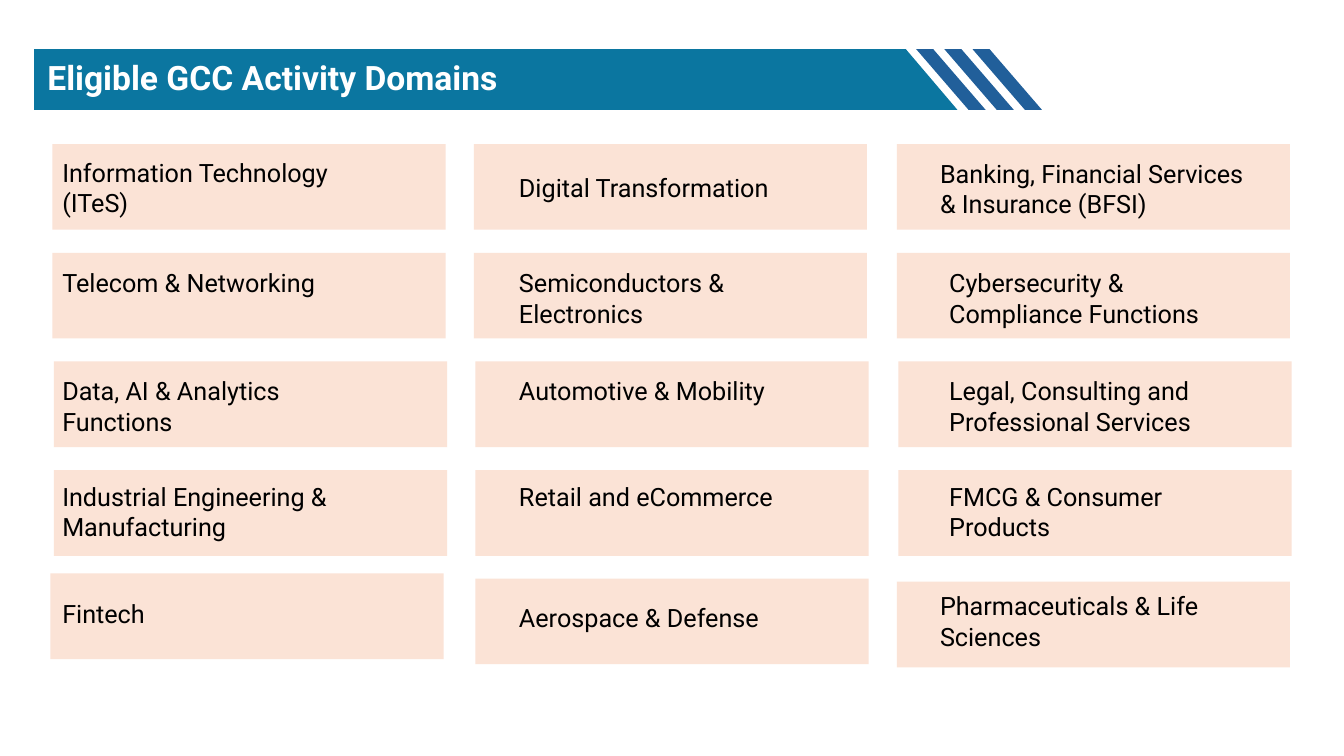
from dataclasses import dataclass

from pptx import Presentation
from pptx.dml.color import RGBColor
from pptx.enum.shapes import MSO_SHAPE
from pptx.enum.text import MSO_ANCHOR, MSO_AUTO_SIZE, PP_ALIGN
from pptx.util import Cm, Pt

TITLE = "Eligible GCC Activity Domains"
DOMAINS = [
    ("Information Technology (ITeS)\t", "Digital Transformation",
     "Banking, Financial Services & Insurance (BFSI)"),
    ("Telecom & Networking", "Semiconductors & Electronics",
     "Cybersecurity & Compliance Functions"),
    ("Data, AI & Analytics Functions", "Automotive & Mobility",
     "Legal, Consulting and Professional Services"),
    ("Industrial Engineering & Manufacturing", "Retail and eCommerce",
     "FMCG & Consumer Products"),
    ("Fintech", "Aerospace & Defense", "Pharmaceuticals & Life Sciences"),
]


@dataclass(frozen=True)
class Theme:
    font: str = "Roboto"
    band: str = "0B76A0"
    stripe: str = "215F9A"
    card: str = "FBE3D6"
    ink: str = "000000"
    light: str = "FFFFFF"
    head: int = 24
    body: int = 18


THEME = Theme()

# All lengths below are in centimetres.
BAND = [(0.86, 1.24), (0.86, 2.77), (24.13, 2.77), (22.83, 1.24)]
STRIPE = [(24.84, 2.77), (23.52, 1.24), (23.09, 1.24), (24.41, 2.77)]
STRIPE_GAP = 0.71
CARD_W, CARD_H = 9.91, 2.16
CARD_X = (1.32, 11.94, 22.6)
CARD_Y, ROW_GAP = 3.63, 2.74

# Card offsets from the grid, one (x, y) for each column.
SHIFT = [
    [(0, 0)] * 3,
    [(0, 0)] * 3,
    [(0.04, 0)] * 3,
    [(0.04, 0)] * 3,
    [(-0.05, -0.14), (0.04, -0.01), (0, 0.07)],
]
# Left edge and width of the labels, and their drop below the card top.
NARROW = [(1.32, 8.56), (12.83, 8.23), (23.67, 7.75)]
LABEL = [
    NARROW[:2] + [(23.44, 8.23)],
    NARROW,
    NARROW,
    NARROW,
    [(1.32, 9.17), (12.83, 8.81), (23.44, 8.81)],
]
DROP = [(0.21, 0.59, 0.23), (0.25,) * 3, (0.23,) * 3, (0.15,) * 3,
        (0.51, 0.48, 0.1)]


def paint(shape, color):
    shape.fill.solid()
    shape.fill.fore_color.rgb = RGBColor.from_string(color)
    shape.line.fill.background()
    shape.shadow.inherit = False


def outline(slide, points, color):
    spots = [(Cm(x), Cm(y)) for x, y in points]
    form = slide.shapes.build_freeform(*spots[0])
    form.add_line_segments(spots[1:], close=True)
    paint(form.convert_to_shape(), color)


def write(shape, text, size=THEME.body, color=THEME.ink, bold=False):
    frame = shape.text_frame
    frame.word_wrap = True
    frame.auto_size = MSO_AUTO_SIZE.NONE
    frame.vertical_anchor = MSO_ANCHOR.TOP
    para = frame.paragraphs[0]
    para.alignment = PP_ALIGN.LEFT
    run = para.add_run()
    run.text = text
    run.font.name = THEME.font
    run.font.size = Pt(size)
    run.font.bold = bold
    run.font.color.rgb = RGBColor.from_string(color)


def draw_head(slide):
    outline(slide, BAND, THEME.band)
    for i in range(3):
        outline(slide, [(x + i * STRIPE_GAP, y) for x, y in STRIPE],
                THEME.stripe)
    title = slide.shapes.title
    title.left, title.top = Cm(0.94), Cm(1.3)
    title.width, title.height = Cm(23.93), Cm(1.27)
    write(title, TITLE, size=THEME.head, color=THEME.light, bold=True)
    # Bring the title in front of the band.
    slide.shapes._spTree.append(title._element)


def draw_card(slide, row, col):
    dx, dy = SHIFT[row][col]
    top = CARD_Y + row * ROW_GAP + dy
    card = slide.shapes.add_shape(
        MSO_SHAPE.RECTANGLE, Cm(CARD_X[col] + dx), Cm(top),
        Cm(CARD_W), Cm(CARD_H))
    paint(card, THEME.card)
    left, width = LABEL[row][col]
    label = slide.shapes.add_textbox(
        Cm(left), Cm(top + DROP[row][col]), Cm(width), Cm(1.8))
    write(label, DOMAINS[row][col])


def main():
    deck = Presentation()
    deck.slide_width, deck.slide_height = Cm(33.87), Cm(19.05)
    slide = deck.slides.add_slide(deck.slide_layouts[5])
    draw_head(slide)
    for row, names in enumerate(DOMAINS):
        for col in range(len(names)):
            draw_card(slide, row, col)
    deck.save("out.pptx")


if __name__ == "__main__":
    main()
